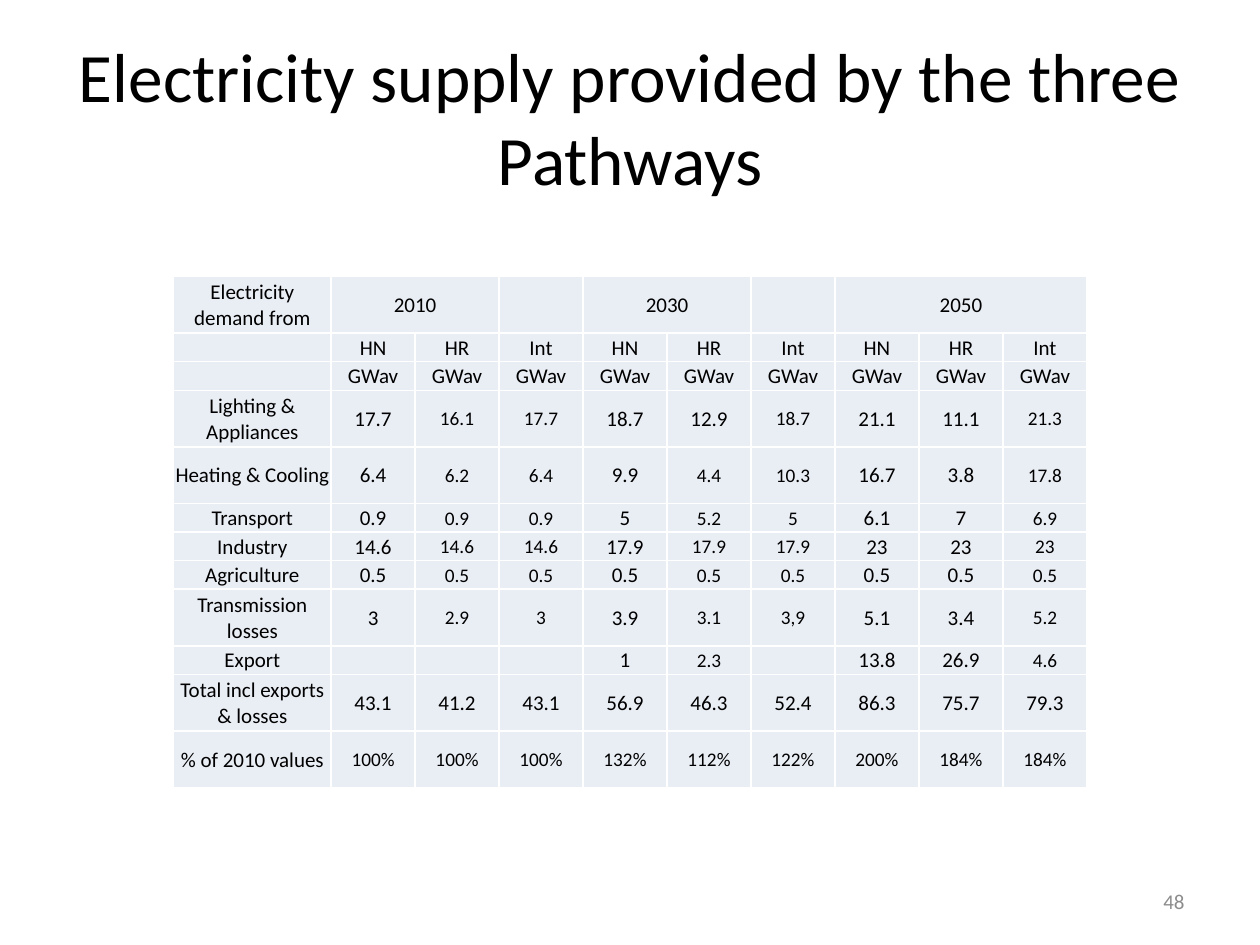
from dataclasses import dataclass

from lxml.etree import SubElement
from pptx import Presentation
from pptx.dml.color import RGBColor
from pptx.enum.text import MSO_ANCHOR, MSO_AUTO_SIZE, PP_ALIGN
from pptx.oxml import parse_xml
from pptx.oxml.ns import nsdecls, qn
from pptx.util import Pt


@dataclass(frozen=True)
class Theme:
    font: str = "Calibri"
    ink: str = "000000"
    muted: str = "8C8C8C"
    cell: str = "E9EDF4"
    rule: str = "FFFFFF"
    title: float = 39.6
    body: float = 12
    small: float = 11


THEME = Theme()

HEADINGS = [
    ["Electricity demand from", "2010", "", "", "2030", "", "", "2050", "", ""],
    [""] + ["HN", "HR", "Int"] * 3,
    [""] + ["GWav"] * 9,
]
DEMAND = [
    ["Lighting & Appliances", "17.7", "16.1", "17.7", "18.7", "12.9", "18.7", "21.1", "11.1", "21.3"],
    ["Heating & Cooling", "6.4", "6.2", "6.4", "9.9", "4.4", "10.3", "16.7", "3.8", "17.8"],
    ["Transport", "0.9", "0.9", "0.9", "5", "5.2", "5", "6.1", "7", "6.9"],
    ["Industry", "14.6", "14.6", "14.6", "17.9", "17.9", "17.9", "23", "23", "23"],
    ["Agriculture"] + ["0.5"] * 9,
    ["Transmission losses", "3", "2.9", "3", "3.9", "3.1", "3,9", "5.1", "3.4", "5.2"],
    ["Export", "", "", "", "1", "2.3", "", "13.8", "26.9", "4.6"],
]
TOTALS = [
    ["Total incl exports & losses", "43.1", "41.2", "43.1", "56.9", "46.3", "52.4", "86.3", "75.7", "79.3"],
    ["% of 2010 values", "100%", "100%", "100%", "132%", "112%", "122%", "200%", "184%", "184%"],
]
ROWS = HEADINGS + DEMAND + TOTALS
FIRST_DEMAND = len(HEADINGS)
TOTAL_ROW = FIRST_DEMAND + len(DEMAND)
TALL_ROWS = {0, 3, 4, 8, 10, 11}
YEAR_SPANS = [(1, 2), (4, 5), (7, 9)]  # first and last column
SMALL_COLUMNS = {2, 3, 5, 6, 9}


def write(frame, text, *, size=THEME.body, color=THEME.ink, align=PP_ALIGN.CENTER):
    paragraph = frame.paragraphs[0]
    paragraph.alignment = align
    if not text:  # keeps an empty cell as low as its row
        SubElement(paragraph._p, qn("a:endParaRPr"), sz=str(size * 100))
        return
    run = paragraph.add_run()
    run.text = text
    run.font.name = THEME.font
    run.font.size = Pt(size)
    run.font.color.rgb = RGBColor.from_string(color)


def figure_size(row, column):
    if column == 0 or row < FIRST_DEMAND or row == TOTAL_ROW:
        return THEME.body
    if row > TOTAL_ROW:
        return THEME.small
    if (row, column) == (FIRST_DEMAND, 5):
        return THEME.body
    return THEME.small if column in SMALL_COLUMNS else THEME.body


def style_cell(cell):
    cell.margin_left = cell.margin_right = cell.margin_top = Pt(0.6)
    cell.margin_bottom = 0
    cell.vertical_anchor = MSO_ANCHOR.MIDDLE
    cell.fill.solid()
    cell.fill.fore_color.rgb = RGBColor.from_string(THEME.cell)
    # Borders come before the fill in the cell properties
    properties = cell._tc.get_or_add_tcPr()
    for position, side in enumerate("LRTB"):
        properties.insert(position, parse_xml(
            f'<a:ln{side} {nsdecls("a")} w="{Pt(1)}"><a:solidFill>'
            f'<a:srgbClr val="{THEME.rule}"/></a:solidFill></a:ln{side}>'))


def place_title(slide, left, top, width, height):
    title = slide.shapes.title
    title.left, title.top, title.width, title.height = map(Pt, (left, top, width, height))
    frame = title.text_frame
    frame.word_wrap = True
    frame.auto_size = MSO_AUTO_SIZE.NONE
    frame.vertical_anchor = MSO_ANCHOR.MIDDLE
    write(frame, "Electricity supply provided by the three Pathways", size=THEME.title)


def place_demand_table(slide, left, top, width, height):
    label_width, tall = 90, 32.4
    column_count = len(ROWS[0])
    figure_width = (width - label_width) / (column_count - 1)
    short = (height - tall * len(TALL_ROWS)) / (len(ROWS) - len(TALL_ROWS))
    table = slide.shapes.add_table(
        len(ROWS), column_count, Pt(left), Pt(top), Pt(width), Pt(height)).table
    table.first_row = table.horz_banding = False

    for index, column in enumerate(table.columns):
        column.width = Pt(figure_width if index else label_width)
    for row_index, values in enumerate(ROWS):
        table.rows[row_index].height = Pt(tall if row_index in TALL_ROWS else short)
        for column_index, value in enumerate(values):
            cell = table.cell(row_index, column_index)
            style_cell(cell)
            write(cell.text_frame, value, size=figure_size(row_index, column_index))
    for first, last in YEAR_SPANS:
        table.cell(0, first).merge(table.cell(0, last))


def place_page_number(slide, left, top, width, height):
    page_number = slide.shapes.add_textbox(*map(Pt, (left, top, width, height)))
    frame = page_number.text_frame
    frame.word_wrap = True
    frame.vertical_anchor = MSO_ANCHOR.MIDDLE
    write(frame, "48", color=THEME.muted, align=PP_ALIGN.RIGHT)


def main():
    presentation = Presentation()
    presentation.slide_width, presentation.slide_height = Pt(720), Pt(540)
    slide = presentation.slides.add_slide(presentation.slide_layouts.get_by_name("Title Only"))
    place_title(slide, 36, 21.6, 648, 90)
    place_demand_table(slide, 99.2, 158, 522, 292.2)
    place_page_number(slide, 516, 500.5, 168, 28.8)
    presentation.save("out.pptx")


if __name__ == "__main__":
    main()
